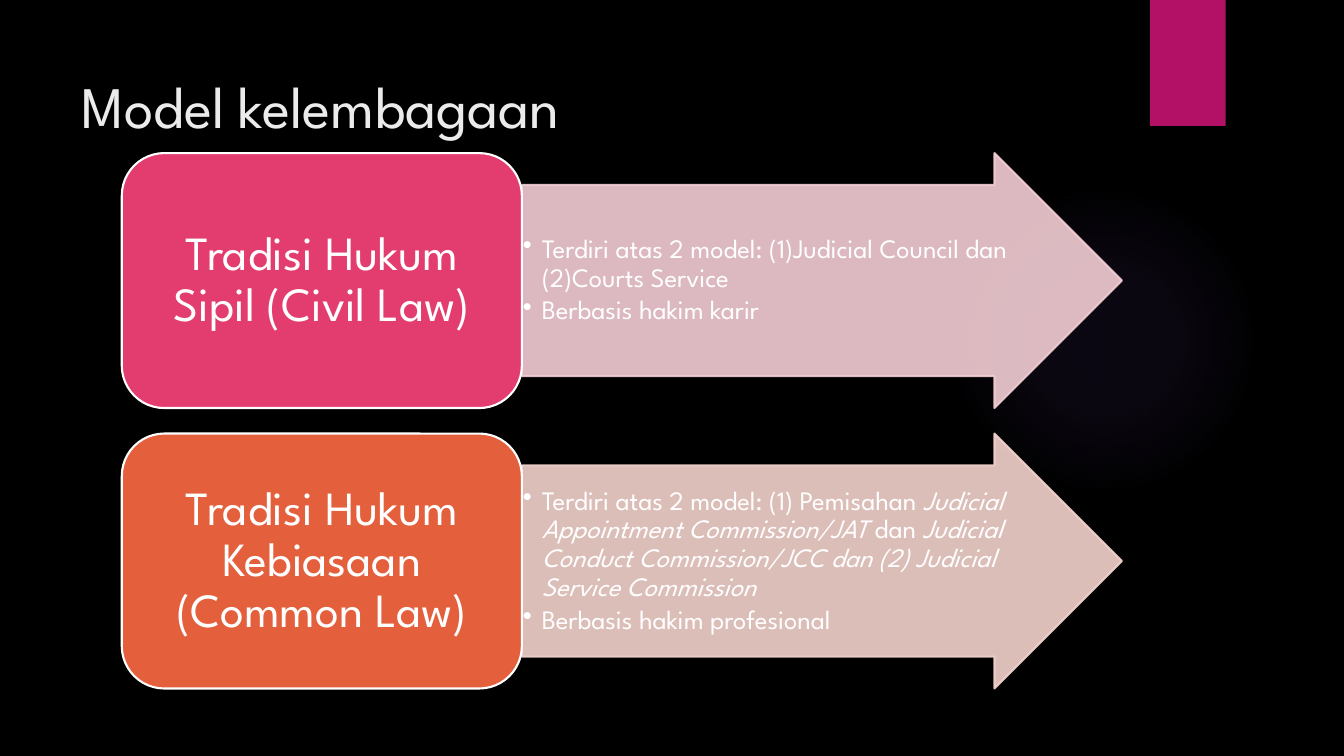
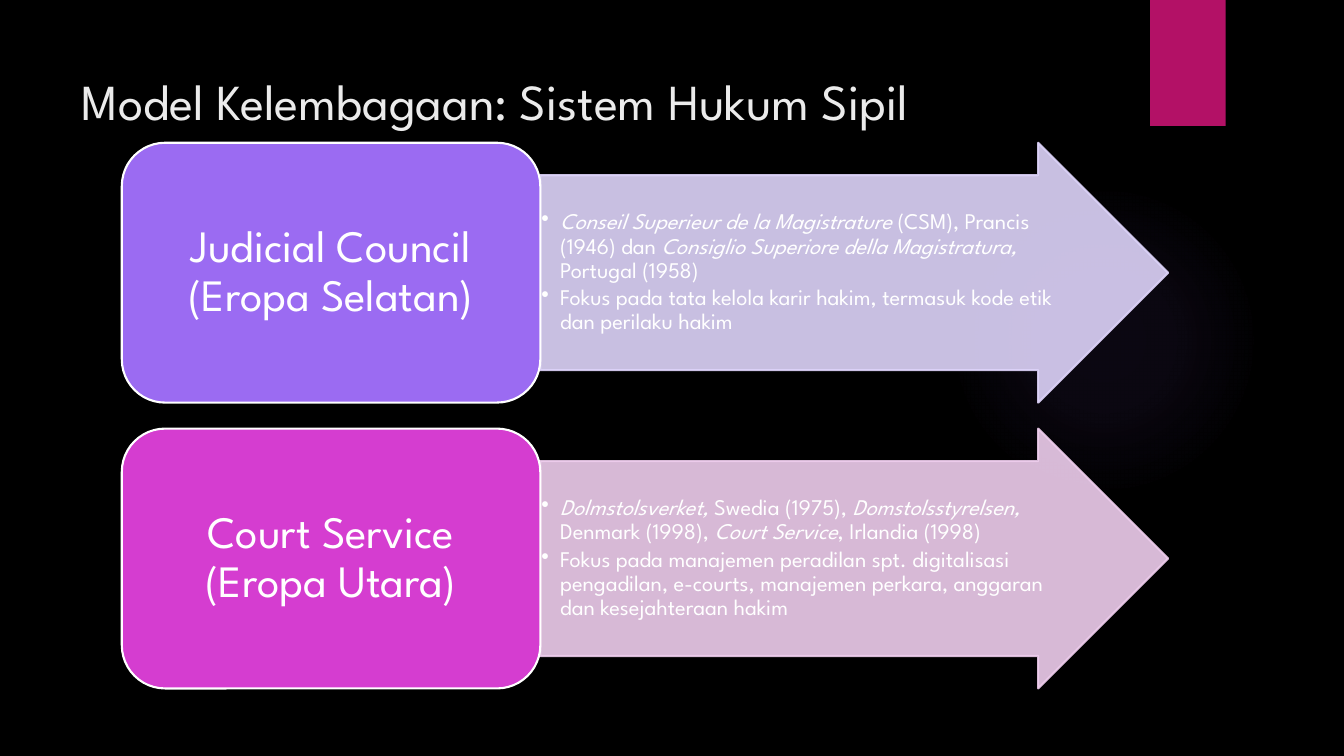
from dataclasses import dataclass

from pptx import Presentation
from pptx.dml.color import RGBColor
from pptx.enum.shapes import MSO_SHAPE
from pptx.enum.text import MSO_ANCHOR, MSO_AUTO_SIZE, PP_ALIGN
from pptx.oxml import parse_xml
from pptx.oxml.ns import nsdecls, qn
from pptx.shapes.autoshape import Shape
from pptx.slide import Slide
from pptx.text.text import TextFrame
from pptx.util import Pt

ARROW, BLOCK = MSO_SHAPE.RIGHT_ARROW, MSO_SHAPE.ROUNDED_RECTANGLE
ELLIPSE, RECTANGLE = MSO_SHAPE.OVAL, MSO_SHAPE.RECTANGLE
TOP, MIDDLE = MSO_ANCHOR.TOP, MSO_ANCHOR.MIDDLE
LEFT, CENTER = PP_ALIGN.LEFT, PP_ALIGN.CENTER
NO_AUTOFIT = MSO_AUTO_SIZE.NONE

FONT = "League Spartan"
BLACK = RGBColor(0x00, 0x00, 0x00)
WHITE = RGBColor(0xFF, 0xFF, 0xFF)
TITLE_GREY = RGBColor(0xEB, 0xEB, 0xEB)
TAB_MAGENTA = RGBColor(0xB3, 0x11, 0x66)
ROSE = RGBColor(0xE3, 0x3D, 0x6F)
ROSE_TINT = RGBColor(0xF4, 0xCE, 0xD5)
ORANGE = RGBColor(0xE4, 0x5F, 0x3C)
ORANGE_TINT = RGBColor(0xF5, 0xD3, 0xCE)
VIOLET = RGBColor(0x9B, 0x6B, 0xF2)
VIOLET_TINT = RGBColor(0xDE, 0xD4, 0xFA)
ORCHID = RGBColor(0xD5, 0x3D, 0xD0)
ORCHID_TINT = RGBColor(0xEF, 0xCE, 0xEE)

TITLE_LAYOUT = 5
DIAGRAM_LEFT, DIAGRAM_BOTTOM = 87, 491.8
BLOCK_SHARE, GAP_SHARE = 0.4, 0.1
GLOW_STOPS = ((0, 7), (36, 6), (69, 0))


@dataclass(frozen=True)
class Span:
    """A stretch of text in one style."""

    text: str
    italic: bool = False


@dataclass(frozen=True)
class Row:
    """A coloured block with its arrow of bullet points."""

    heading: str
    color: RGBColor
    tint: RGBColor
    points: list[list[Span]]


@dataclass(frozen=True)
class Page:
    """The content and measures of one slide."""

    title: str
    title_size: float
    title_width: float
    title_height: float
    diagram_top: float
    diagram_width: float
    heading_size: float
    point_size: float
    rows: list[Row]


PAGES = [
    Page(
        "Model kelembagaan", 42, 741, 110, 109.4, 714.4, 34, 19,
        [
            Row("Tradisi Hukum Sipil (Civil Law)", ROSE, ROSE_TINT, [
                [Span("Terdiri atas 2 model: (1)Judicial Council dan (2)Courts Service")],
                [Span("Berbasis hakim karir")],
            ]),
            Row("Tradisi Hukum Kebiasaan (Common Law)", ORANGE, ORANGE_TINT, [
                [
                    Span("Terdiri atas 2 model: (1) Pemisahan "),
                    Span("Judicial Appointment Commission/JAT ", True),
                    Span("dan "),
                    Span("Judicial Conduct Commission/JCC dan (2) "
                         "Judicial Service Commission", True),
                ],
                [Span("Berbasis hakim profesional")],
            ]),
        ],
    ),
    Page(
        "Model Kelembagaan: Sistem Hukum Sipil", 36, 765, 60, 102, 747.4, 32, 16,
        [
            Row("Judicial Council (Eropa Selatan)", VIOLET, VIOLET_TINT, [
                [
                    Span("Conseil Superieur de la Magistrature ", True),
                    Span("(CSM), Prancis (1946) dan "),
                    Span("Consiglio Superiore della Magistratura, ", True),
                    Span("Portugal (1958)"),
                ],
                [Span("Fokus pada tata kelola karir hakim, termasuk kode etik "
                      "dan perilaku hakim")],
            ]),
            Row("Court Service (Eropa Utara)", ORCHID, ORCHID_TINT, [
                [
                    Span("Dolmstolsverket, ", True),
                    Span("Swedia (1975), "),
                    Span("Domstolsstyrelsen, ", True),
                    Span("Denmark (1998), "),
                    Span("Court Service", True),
                    Span(", Irlandia (1998)"),
                ],
                [Span("Fokus pada manajemen peradilan spt. digitalisasi pengadilan, "
                      "e-courts, manajemen perkara, anggaran dan kesejahteraan hakim")],
            ]),
        ],
    ),
]


def write_text(
    frame: TextFrame,
    paragraphs: list[list[Span]],
    *,
    size: float,
    color: RGBColor = WHITE,
    align: PP_ALIGN = LEFT,
    anchor: MSO_ANCHOR = MIDDLE,
    margins: tuple[float, float] = (0.75, 0.75),
    line_spacing: float = 0.9,
    bulleted: bool = False,
) -> None:
    """Fill a text frame with formatted paragraphs."""
    frame.word_wrap = True
    frame.auto_size = NO_AUTOFIT
    frame.vertical_anchor = anchor
    frame.margin_left = frame.margin_right = Pt(margins[0])
    frame.margin_top = frame.margin_bottom = Pt(margins[1])
    for index, spans in enumerate(paragraphs):
        paragraph = frame.add_paragraph() if index else frame.paragraphs[0]
        if bulleted:
            properties = paragraph._p.get_or_add_pPr()
            properties.set("marL", str(Pt(13.5)))
            properties.set("indent", str(Pt(-13.5)))
            properties.append(parse_xml(f'<a:buChar {nsdecls("a")} char="•"/>'))
            paragraph.space_after = Pt(0.15 * size)
        paragraph.alignment = align
        paragraph.line_spacing = line_spacing
        for span in spans:
            run = paragraph.add_run()
            run.text = span.text
            run.font.name = FONT
            run.font.size = Pt(size)
            run.font.italic = span.italic
            run.font.color.rgb = color


def add_figure(
    slide: Slide,
    kind: MSO_SHAPE,
    left: float,
    top: float,
    width: float,
    height: float,
    *,
    fill: RGBColor,
    line: RGBColor | None = None,
    opacity: int = 100,
) -> Shape:
    """Add a flat preset shape measured in points."""
    shape = slide.shapes.add_shape(kind, Pt(left), Pt(top), Pt(width), Pt(height))
    shape.shadow.inherit = False
    shape.fill.solid()
    shape.fill.fore_color.rgb = fill
    if line is None:
        shape.line.fill.background()
    else:
        shape.line.color.rgb = line
        shape.line.width = Pt(1.5)
    if opacity < 100:
        for color in list(shape.element.spPr.iter(qn("a:srgbClr"))):
            color.append(parse_xml(f'<a:alpha {nsdecls("a")} val="{opacity * 1000}"/>'))
    return shape


def decorate_layout(slide: Slide) -> None:
    """Put the soft glow and the corner tab on the layout of a slide."""
    glow = add_figure(slide, ELLIPSE, 677.5, 131.8, 221.8, 221.8, fill=VIOLET)
    stops = "".join(
        f'<a:gs pos="{position * 1000}"><a:srgbClr val="{VIOLET}">'
        f'<a:alpha val="{alpha * 1000}"/></a:srgbClr></a:gs>'
        for position, alpha in GLOW_STOPS
    )
    gradient = parse_xml(
        f'<a:gradFill {nsdecls("a")} rotWithShape="1"><a:gsLst>{stops}</a:gsLst>'
        '<a:path path="circle"><a:fillToRect l="50000" t="50000" r="50000" b="50000"/>'
        "</a:path></a:gradFill>"
    )
    properties = glow.element.spPr
    properties.replace(properties.find(qn("a:solidFill")), gradient)
    tab = add_figure(slide, RECTANGLE, 821.5, 0, 54, 90, fill=TAB_MAGENTA)
    for shape in (glow, tab):
        shape.element.nvSpPr.cNvPr.set("id", str(100 + shape.shape_id))
        slide.slide_layout.shapes.element.append(shape.element)


def draw_row(slide: Slide, page: Page, row: Row, top: float, height: float) -> None:
    """Draw one arrow and the block at its tail."""
    block_width = BLOCK_SHARE * page.diagram_width
    arrow = add_figure(
        slide, ARROW, DIAGRAM_LEFT + block_width, top,
        page.diagram_width - block_width, height,
        fill=row.tint, line=row.tint, opacity=90,
    )
    arrow.adjustments[0] = 0.75
    arrow.adjustments[1] = 0.5
    write_text(arrow.text_frame, row.points, size=page.point_size, bulleted=True)
    block = add_figure(
        slide, BLOCK, DIAGRAM_LEFT, top, block_width, height, fill=row.color, line=WHITE
    )
    write_text(
        block.text_frame, [[Span(row.heading)]],
        size=page.heading_size, align=CENTER, margins=(9.75, 5),
    )


def draw_page(slide: Slide, page: Page) -> None:
    """Write the title and stack the rows of a slide."""
    title = slide.shapes.title
    title.left, title.top = Pt(51), Pt(36)
    title.width, title.height = Pt(page.title_width), Pt(page.title_height)
    write_text(
        title.text_frame, [[Span(page.title)]],
        size=page.title_size, color=TITLE_GREY, anchor=TOP,
        margins=(7.2, 14), line_spacing=1,
    )
    count = len(page.rows)
    available = DIAGRAM_BOTTOM - page.diagram_top
    height = available / (count + (count - 1) * GAP_SHARE)
    for index, row in enumerate(page.rows):
        top = page.diagram_top + index * height * (1 + GAP_SHARE)
        draw_row(slide, page, row, top, height)


def main() -> None:
    """Build and save the presentation."""
    presentation = Presentation()
    presentation.slide_width, presentation.slide_height = Pt(960), Pt(540)
    background = presentation.slide_master.background.fill
    background.solid()
    background.fore_color.rgb = BLACK
    layout = presentation.slide_layouts[TITLE_LAYOUT]
    slides = [presentation.slides.add_slide(layout) for _ in PAGES]
    decorate_layout(slides[0])
    for slide, page in zip(slides, PAGES):
        draw_page(slide, page)
    presentation.save("out.pptx")


if __name__ == "__main__":
    main()
